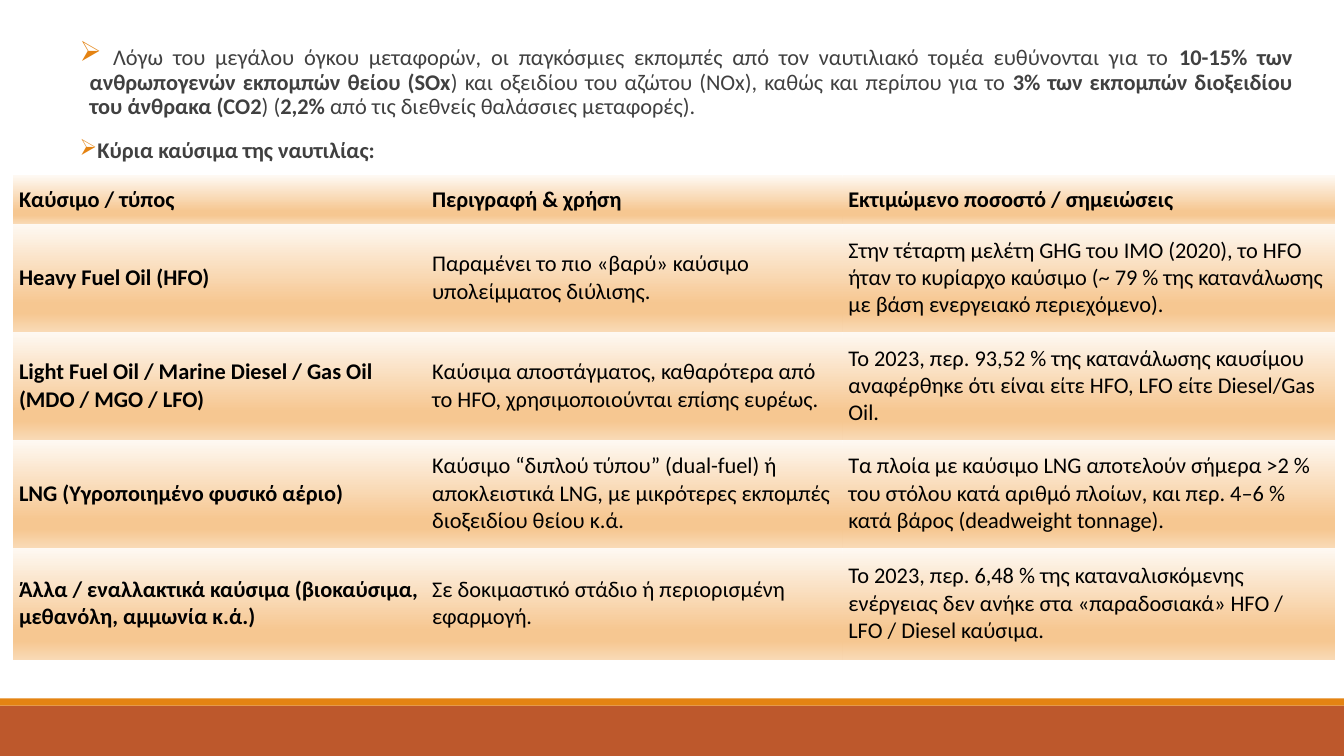
from lxml import etree
from pptx import Presentation
from pptx.dml.color import RGBColor
from pptx.enum import shapes, text
from pptx.oxml.ns import qn
from pptx.util import Cm, Pt

FONT = "Calibri"
NO_STYLE_NO_GRID = "{2D5ABB26-0587-4C30-8999-92F81FD0307C}"
CELL_GRADIENT = [(0, "FEF9F3"), (74, "F6C791"), (83, "F6C791"), (100, "F9DAB6")]
COLUMN_WIDTHS = [10.41, 10.49, 12.42]
ROW_HEIGHTS = [1.22, 2.72, 2.72, 2.72, 2.82]

# Each run is (wording, bold, size).
INTRO = [
    [
        (" ", False, 20),
        ("Λόγω του μεγάλου όγκου μεταφορών, οι παγκόσμιες εκπομπές από τον "
         "ναυτιλιακό τομέα ευθύνονται για το ", False, 16),
        ("10-15% των ανθρωπογενών εκπομπών θείου (SOx", True, 16),
        (") και οξειδίου του αζώτου (NOx), καθώς και περίπου για το ", False, 16),
        ("3% των εκπομπών διοξειδίου του άνθρακα (CO2", True, 16),
        (") (", False, 16),
        ("2,2%", True, 16),
        (" από τις διεθνείς θαλάσσιες μεταφορές).", False, 16),
    ],
    [("Κύρια καύσιμα της ναυτιλίας:", True, 16)],
]

FUELS = [
    ("Καύσιμο / τύπος", "Περιγραφή & χρήση", "Εκτιμώμενο ποσοστό / σημειώσεις"),
    ("Heavy Fuel Oil (HFO)",
     "Παραμένει το πιο «βαρύ» καύσιμο υπολείμματος διύλισης.",
     "Στην τέταρτη μελέτη GHG του IMO (2020), το HFO ήταν το κυρίαρχο καύσιμο "
     "(~ 79 % της κατανάλωσης με βάση ενεργειακό περιεχόμενο)."),
    ("Light Fuel Oil / Marine Diesel / Gas Oil (MDO / MGO / LFO)",
     "Καύσιμα αποστάγματος, καθαρότερα από το HFO, χρησιμοποιούνται επίσης ευρέως.",
     "Το 2023, περ. 93,52 % της κατανάλωσης καυσίμου αναφέρθηκε ότι είναι είτε "
     "HFO, LFO είτε Diesel/Gas Oil."),
    ("LNG (Υγροποιημένο φυσικό αέριο)",
     "Καύσιμο “διπλού τύπου” (dual-fuel) ή αποκλειστικά LNG, με μικρότερες "
     "εκπομπές διοξειδίου θείου κ.ά.",
     "Τα πλοία με καύσιμο LNG αποτελούν σήμερα >2 % του στόλου κατά αριθμό "
     "πλοίων, και περ. 4–6 % κατά βάρος (deadweight tonnage)."),
    ("Άλλα / εναλλακτικά καύσιμα (βιοκαύσιμα, μεθανόλη, αμμωνία κ.ά.)",
     "Σε δοκιμαστικό στάδιο ή περιορισμένη εφαρμογή.",
     "Το 2023, περ. 6,48 % της καταναλισκόμενης ενέργειας δεν ανήκε στα "
     "«παραδοσιακά» HFO / LFO / Diesel καύσιμα."),
]


def colour(value):
    return RGBColor.from_string(value)


def add_band(page, top, height, fill):
    """Add a footer band across the full width of the page."""
    band = page.shapes.add_shape(
        shapes.MSO_SHAPE.RECTANGLE, 0, Cm(top), Cm(33.87), Cm(height))
    band.shadow.inherit = False
    band.fill.solid()
    band.fill.fore_color.rgb = colour(fill)
    band.line.fill.background()


def add_span(para, wording, bold, size, ink):
    span = para.add_run()
    span.text = wording
    span.font.name = FONT
    span.font.size = Pt(size)
    span.font.bold = bold
    span.font.color.rgb = colour(ink)


def add_bullet(para, char, ink):
    """Give the paragraph a coloured bullet with a hanging indent."""
    props = para._p.get_or_add_pPr()
    props.set("marL", str(Cm(0.25)))
    props.set("indent", str(-Cm(0.25)))
    bullet_colour = etree.SubElement(props, qn("a:buClr"))
    etree.SubElement(bullet_colour, qn("a:srgbClr"), val=ink)
    etree.SubElement(props, qn("a:buChar"), char=char)


def add_intro(page):
    box = page.shapes.add_textbox(Cm(2.01), Cm(0.91), Cm(30.56), Cm(3.5))
    frame = box.text_frame
    frame.word_wrap = True
    frame.margin_left = frame.margin_right = 0
    frame.margin_top = frame.margin_bottom = Cm(0.13)
    for index, spans in enumerate(INTRO):
        para = frame.add_paragraph() if index else frame.paragraphs[0]
        para.alignment = text.PP_ALIGN.JUSTIFY
        para.line_spacing = 0.9
        para.space_before = Pt(12)
        para.space_after = Pt(2)
        add_bullet(para, "➢", "E48312")
        for wording, bold, size in spans:
            add_span(para, wording, bold, size, "404040")


def fill_gradient(cell, stops):
    """Fill the cell with a top-to-bottom gradient of (percent, colour) stops."""
    gradient = etree.SubElement(
        cell._tc.get_or_add_tcPr(), qn("a:gradFill"), rotWithShape="1")
    stop_list = etree.SubElement(gradient, qn("a:gsLst"))
    for percent, value in stops:
        stop = etree.SubElement(stop_list, qn("a:gs"), pos=str(percent * 1000))
        etree.SubElement(stop, qn("a:srgbClr"), val=value)
    etree.SubElement(gradient, qn("a:lin"), ang="5400000", scaled="0")


def fill_cell(cell, wording, bold):
    cell.vertical_anchor = text.MSO_ANCHOR.MIDDLE
    cell.margin_left = cell.margin_right = Cm(0.15)
    cell.margin_top = cell.margin_bottom = Cm(0.08)
    add_span(cell.text_frame.paragraphs[0], wording, bold, 16, "000000")
    fill_gradient(cell, CELL_GRADIENT)


def add_fuel_table(page):
    table = page.shapes.add_table(
        len(ROW_HEIGHTS), len(COLUMN_WIDTHS), Cm(0.33), Cm(4.42),
        Cm(sum(COLUMN_WIDTHS)), Cm(sum(ROW_HEIGHTS))).table
    table.first_row = table.horz_banding = False
    table._tbl.tblPr.find(qn("a:tableStyleId")).text = NO_STYLE_NO_GRID
    for column, width in zip(table.columns, COLUMN_WIDTHS):
        column.width = Cm(width)
    for row, height in zip(table.rows, ROW_HEIGHTS):
        row.height = Cm(height)
    for r, wordings in enumerate(FUELS):
        for c, wording in enumerate(wordings):
            fill_cell(table.cell(r, c), wording, bold=r == 0 or c == 0)


def main():
    deck = Presentation()
    deck.slide_width = Cm(33.87)
    deck.slide_height = Cm(19.05)
    page = deck.slides.add_slide(deck.slide_layouts[6])
    add_band(page, 17.78, 1.27, "BD582C")
    add_band(page, 17.6, 0.18, "E48312")
    add_intro(page)
    add_fuel_table(page)
    deck.save("out.pptx")


if __name__ == "__main__":
    main()
